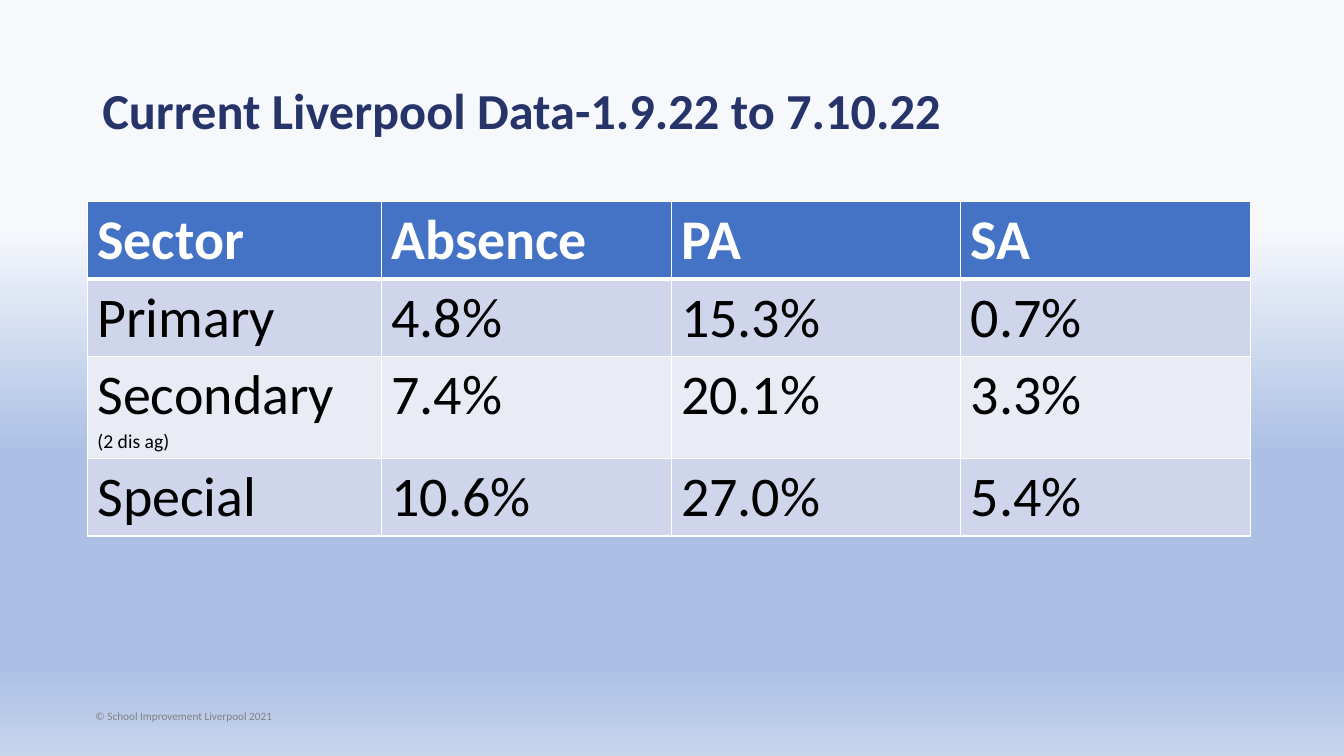
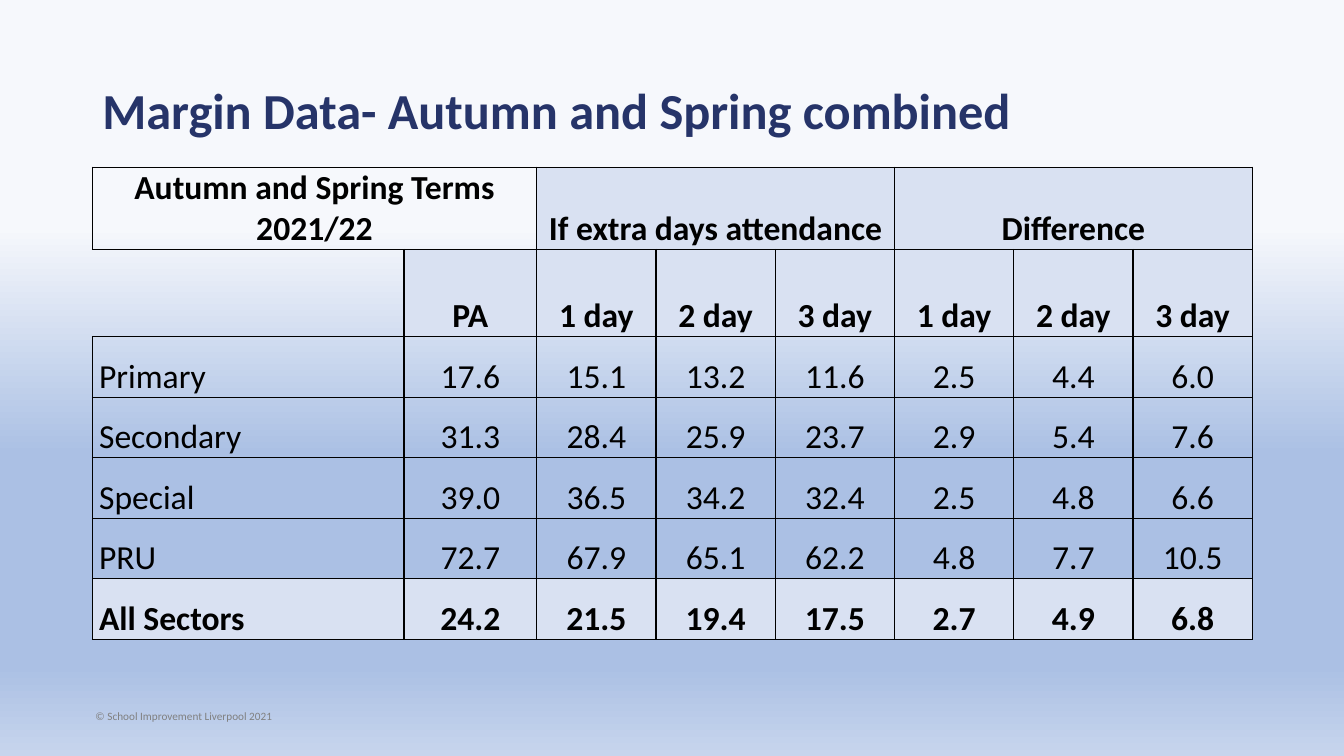
from lxml.etree import SubElement
from pptx import Presentation
from pptx.dml.color import RGBColor
from pptx.enum.text import MSO_ANCHOR as Anchor, PP_ALIGN as Align
from pptx.oxml.ns import qn
from pptx.util import Emu, Pt

EMU_PER_PX = 7620
FONT = "Calibri"
BLACK, WHITE = "000000", "FFFFFF"
NAVY, GREY = "263469", "808080"
HEADER_BLUE, PALE_BLUE = "4472C4", "D9E1F2"
ROW_BANDS = ("CFD5EA", "E9EBF5")
SKY_STOPS = ((30, "F6F8FC"), (60, "ABC0E4"), (88, "ABC0E4"), (100, "C7D5ED"))
COPYRIGHT = "© School Improvement Liverpool 2021"

ATTENDANCE = (
    ("Sector", "Absence", "PA", "SA"),
    ("Primary", "4.8%", "15.3%", "0.7%"),
    ("Secondary", "7.4%", "20.1%", "3.3%"),
    ("Special", "10.6%", "27.0%", "5.4%"),
)
SECTOR_NOTES = {"Secondary": "(2 dis ag)"}

MARGIN_GROUPS = (
    (0, 1, "Autumn and Spring Terms 2021/22"),
    (2, 4, "If extra days attendance"),
    (5, 7, "Difference"),
)
EXTRA_DAYS = ("1 day", "2 day", "3 day")
MARGINS = (
    ("", "PA", *EXTRA_DAYS, *EXTRA_DAYS),
    ("Primary", "17.6", "15.1", "13.2", "11.6", "2.5", "4.4", "6.0"),
    ("Secondary", "31.3", "28.4", "25.9", "23.7", "2.9", "5.4", "7.6"),
    ("Special", "39.0", "36.5", "34.2", "32.4", "2.5", "4.8", "6.6"),
    ("PRU", "72.7", "67.9", "65.1", "62.2", "4.8", "7.7", "10.5"),
    ("All Sectors", "24.2", "21.5", "19.4", "17.5", "2.7", "4.9", "6.8"),
)


def px(length):
    return Emu(length * EMU_PER_PX)


def rgb(hex_colour):
    return RGBColor.from_string(hex_colour)


def set_format(target, values):
    for attribute, value in values.items():
        setattr(target, attribute, value)


def write_line(paragraph, text, size, colour, bold=False, **layout):
    set_format(paragraph, layout)
    run = paragraph.add_run()
    run.text = text
    set_format(run.font, {"name": FONT, "size": Pt(size), "bold": bold})
    run.font.color.rgb = rgb(colour)


def add_label(slide, box, text, size, colour, bold=False, frame_format=None, **layout):
    frame = slide.shapes.add_textbox(*map(px, box)).text_frame
    set_format(frame, {"word_wrap": True, **(frame_format or {})})
    write_line(frame.paragraphs[0], text, size, colour, bold, **layout)


def paint_sky(master):
    fill = master.background.fill
    fill.gradient()
    fill.gradient_angle = 270
    stops = next(master.element.iter(qn("a:gsLst")))
    for stop in list(stops):
        stops.remove(stop)
    for percent, colour in SKY_STOPS:
        stop = SubElement(stops, qn("a:gs"), pos=str(percent * 1000))
        SubElement(stop, qn("a:srgbClr"), val=colour)


def add_titled_slide(deck, title):
    slide = deck.slides.add_slide(deck.slide_layouts[6])
    add_label(slide, (97, 839, 244, 29), COPYRIGHT, 8, GREY, alignment=Align.CENTER)
    add_label(slide, (110, 48, 1380, 174), title, 36, NAVY, True,
              {"vertical_anchor": Anchor.MIDDLE}, line_spacing=0.9)
    return slide


def add_grid(slide, left, top, widths, heights):
    frame = slide.shapes.add_table(len(heights), len(widths), px(left), px(top),
                                   px(sum(widths)), px(sum(heights)))
    table = frame.table
    set_format(table, {"first_row": False, "horz_banding": False})
    for column, width in zip(table.columns, widths):
        column.width = px(width)
    for row, height in zip(table.rows, heights):
        row.height = px(height)
    return table


def style_cell(cell, fill, colour, **widths):
    if fill:
        cell.fill.solid()
        cell.fill.fore_color.rgb = rgb(fill)
    else:
        cell.fill.background()
    properties = cell._tc.get_or_add_tcPr()
    for position, side in enumerate("LRTB"):
        width = widths.get(side, 1)
        border = SubElement(properties, qn(f"a:ln{side}"), w=str(Pt(width)))
        properties.insert(position, border)
        if width:
            SubElement(SubElement(border, qn("a:solidFill")), qn("a:srgbClr"), val=colour)
        else:
            SubElement(border, qn("a:noFill"))


def add_attendance_table(slide):
    table = add_grid(slide, 104, 240, (350, 345, 345, 345), (92, 92, 122, 92))
    for row, values in enumerate(ATTENDANCE):
        header = row == 0
        fill = HEADER_BLUE if header else ROW_BANDS[(row - 1) % 2]
        colour = WHITE if header else BLACK
        for column, text in enumerate(values):
            cell = table.cell(row, column)
            style_cell(cell, fill, WHITE, T=3 if row == 1 else 1, B=3 if header else 1)
            frame = cell.text_frame
            write_line(frame.paragraphs[0], text, 40, colour, header)
            if text in SECTOR_NOTES:
                write_line(frame.add_paragraph(), SECTOR_NOTES[text], 14, colour)


def write_margin_cell(cell, text, bold, alignment):
    set_format(cell, {"vertical_anchor": Anchor.BOTTOM, "margin_left": px(8),
                      "margin_right": px(8), "margin_top": 0, "margin_bottom": 0})
    if text:
        write_line(cell.text_frame.paragraphs[0], text, 24, BLACK, bold,
                   alignment=alignment)


def add_margin_table(slide):
    table = add_grid(slide, 110, 199, (371, 158) + (142,) * 6, (98, 104) + (72,) * 5)
    for first, last, heading in MARGIN_GROUPS:
        for column in range(first, last + 1):
            style_cell(table.cell(0, column), PALE_BLUE if first else None, BLACK)
        table.cell(0, first).merge(table.cell(0, last))
        write_margin_cell(table.cell(0, first), heading, True, Align.CENTER)
    for row, values in enumerate(MARGINS, 1):
        emphasis = row in (1, len(MARGINS))
        for column, text in enumerate(values):
            cell = table.cell(row, column)
            style_cell(cell, PALE_BLUE if emphasis and text else None, BLACK,
                       L=1 if text else 0)
            write_margin_cell(cell, text, emphasis, Align.CENTER if column else Align.LEFT)


def main():
    deck = Presentation()
    set_format(deck, {"slide_width": px(1600), "slide_height": px(900)})
    paint_sky(deck.slide_master)
    add_attendance_table(add_titled_slide(deck, "Current Liverpool Data-1.9.22 to 7.10.22"))
    add_margin_table(add_titled_slide(deck, "Margin Data- Autumn and Spring combined"))
    deck.save("out.pptx")


if __name__ == "__main__":
    main()
